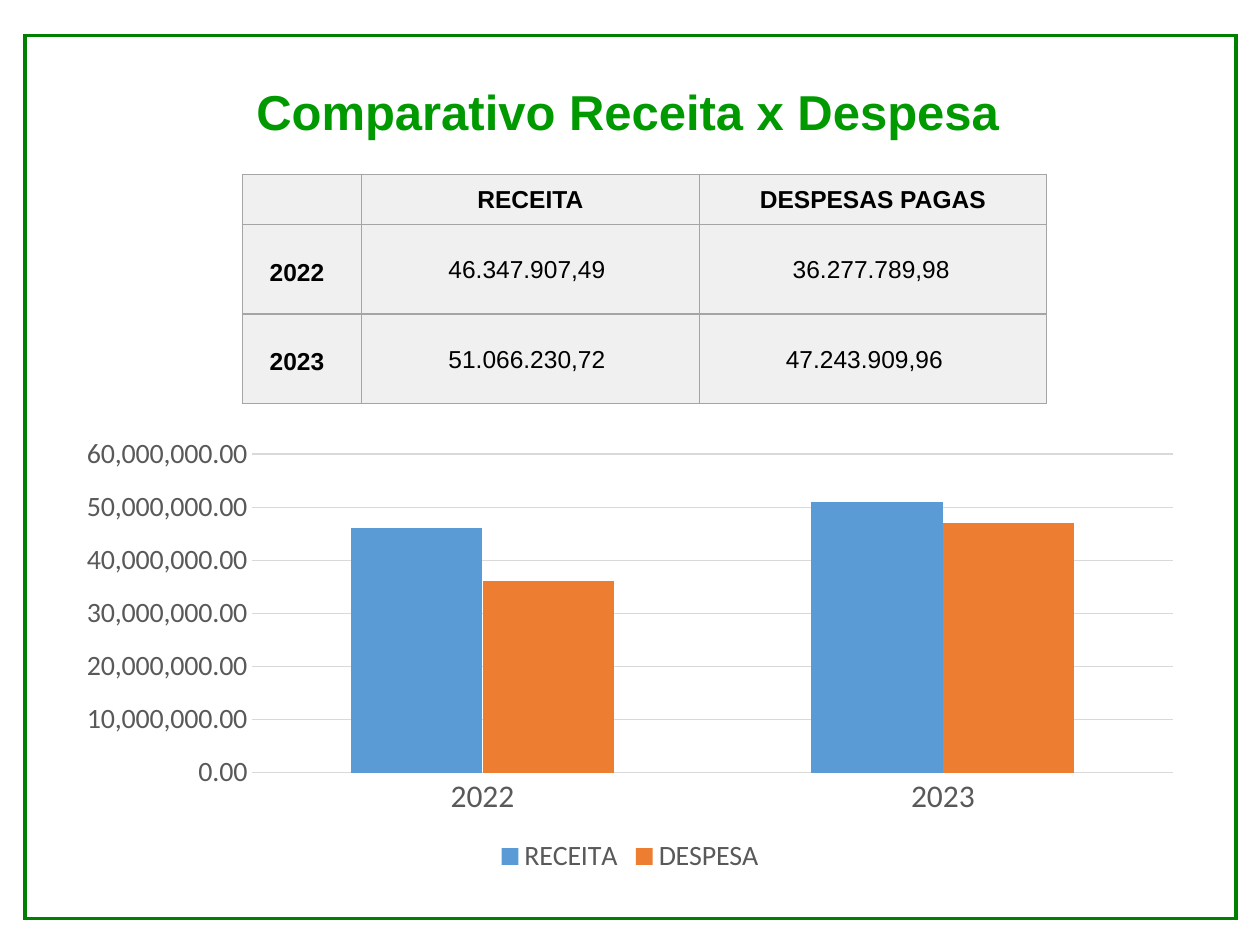
"""Build a slide comparing yearly revenue and expenses in a table and a chart."""
from lxml import etree
from pptx import Presentation
from pptx import util as u
from pptx.chart.data import CategoryChartData
from pptx.dml.color import RGBColor
from pptx.enum import chart as ch
from pptx.enum import shapes, text
from pptx.oxml import ns

FRAME_GREEN = RGBColor(0x00, 0x80, 0x00)
TITLE_GREEN = RGBColor(0x00, 0x99, 0x00)
BLACK = RGBColor(0x00, 0x00, 0x00)
CELL_GRAY = RGBColor(0xF0, 0xF0, 0xF0)
BORDER_GRAY = RGBColor(0xA5, 0xA5, 0xA5)
LABEL_GRAY = RGBColor(0x59, 0x59, 0x59)
GRID_GRAY = RGBColor(0xD9, 0xD9, 0xD9)
BLUE = RGBColor(0x5B, 0x9B, 0xD5)
ORANGE = RGBColor(0xED, 0x7D, 0x31)

YEARS = ("2022", "2023")
SERIES = (
    ("RECEITA", (46000000, 51000000), BLUE),
    ("DESPESA", (36000000, 47000000), ORANGE),
)
TABLE_ROWS = (
    ("", "RECEITA", "DESPESAS PAGAS"),
    ("2022", "46.347.907,49 ", " 36.277.789,98"),
    ("2023", "51.066.230,72 ", "47.243.909,96 "),
)
COLUMN_WIDTHS = (68, 193, 198.5)
ROW_HEIGHTS = (28.5, 51.2, 51.2)


def style_font(font, name, size, color, bold=False):
    font.name = name
    font.size = u.Pt(size)
    font.bold = bold
    font.color.rgb = color


def write_centered(frame, words, size, color, bold):
    paragraph = frame.paragraphs[0]
    paragraph.alignment = text.PP_ALIGN.CENTER
    run = paragraph.add_run()
    run.text = words
    style_font(run.font, "Arial", size, color, bold)


def add_frame(slide):
    frame = slide.shapes.add_shape(
        shapes.MSO_SHAPE.RECTANGLE, u.Pt(14.4), u.Pt(20.2), u.Pt(692), u.Pt(504.7))
    frame.shadow.inherit = False
    frame.fill.background()
    frame.line.color.rgb = FRAME_GREEN
    frame.line.width = u.Pt(2)
    outline = frame._element.spPr.find(ns.qn("a:ln"))
    etree.SubElement(outline, ns.qn("a:miter"), lim="800000")


def add_title(slide, words):
    title = slide.shapes.add_textbox(u.Pt(76.3), u.Pt(43.2), u.Pt(572.4), u.Pt(41))
    title.text_frame.word_wrap = True
    write_centered(title.text_frame, words, 28, TITLE_GREEN, True)


def set_borders(cell):
    properties = cell._tc.get_or_add_tcPr()
    for position, side in enumerate(("a:lnL", "a:lnR", "a:lnT", "a:lnB")):
        border = etree.Element(ns.qn(side), w=str(u.Pt(1)))
        fill = etree.SubElement(border, ns.qn("a:solidFill"))
        etree.SubElement(fill, ns.qn("a:srgbClr"), val=str(BORDER_GRAY))
        properties.insert(position, border)


def fill_cell(cell, words, row, column):
    cell.fill.solid()
    cell.fill.fore_color.rgb = CELL_GRAY
    set_borders(cell)
    cell.vertical_anchor = text.MSO_ANCHOR.MIDDLE
    is_year = row > 0 and column == 0
    cell.margin_left = u.Pt(0.7)
    cell.margin_right = u.Pt(6.5 if row > 0 and column != 1 else 0.7)
    cell.margin_top = u.Pt(4 if is_year else 0.7)
    cell.margin_bottom = 0
    if words:
        write_centered(cell.text_frame, words, 14, BLACK, row == 0 or is_year)


def add_totals_table(slide):
    totals = slide.shapes.add_table(
        len(ROW_HEIGHTS), len(COLUMN_WIDTHS), u.Pt(138.6), u.Pt(99.8),
        u.Pt(sum(COLUMN_WIDTHS)), u.Pt(sum(ROW_HEIGHTS))).table
    for column, width in zip(totals.columns, COLUMN_WIDTHS):
        column.width = u.Pt(width)
    for row, height in zip(totals.rows, ROW_HEIGHTS):
        row.height = u.Pt(height)
    for row, row_words in enumerate(TABLE_ROWS):
        for column, words in enumerate(row_words):
            fill_cell(totals.cell(row, column), words, row, column)


def style_axis(axis, size):
    axis.major_tick_mark = axis.minor_tick_mark = ch.XL_TICK_MARK.NONE
    axis.format.line.fill.background()
    style_font(axis.tick_labels.font, "Calibri", size, LABEL_GRAY)


def add_comparison_chart(slide):
    data = CategoryChartData(number_format="#,##0.00")
    data.categories = YEARS
    for name, values, _ in SERIES:
        data.add_series(name, values)
    comparison = slide.shapes.add_chart(
        ch.XL_CHART_TYPE.COLUMN_CLUSTERED, u.Pt(36.7), u.Pt(244.6),
        u.Pt(646.6), u.Pt(257.8), data).chart
    style_font(comparison.font, "Calibri", 10, BLACK)
    comparison.has_title = False

    plot = comparison.plots[0]
    plot.gap_width = 150
    plot.overlap = 0
    plot.vary_by_categories = False
    for series, (_, _, color) in zip(plot.series, SERIES):
        series.format.fill.solid()
        series.format.fill.fore_color.rgb = color

    style_axis(comparison.category_axis, 18)
    amounts = comparison.value_axis
    style_axis(amounts, 16)
    amounts.minimum_scale, amounts.maximum_scale = 0, 60000000
    amounts.major_unit = 10000000
    amounts.tick_labels.number_format = "#,##0.00"
    amounts.tick_labels.number_format_is_linked = False
    amounts.major_gridlines.format.line.color.rgb = GRID_GRAY
    amounts.major_gridlines.format.line.width = u.Pt(0.75)

    comparison.has_legend = True
    comparison.legend.position = ch.XL_LEGEND_POSITION.BOTTOM
    comparison.legend.include_in_layout = False
    style_font(comparison.legend.font, "Calibri", 16, LABEL_GRAY)


def main():
    deck = Presentation()
    deck.slide_width, deck.slide_height = u.Pt(720), u.Pt(540)
    slide = deck.slides.add_slide(deck.slide_layouts[6])
    add_frame(slide)
    add_title(slide, "Comparativo Receita x Despesa ")
    add_totals_table(slide)
    add_comparison_chart(slide)
    deck.save("out.pptx")


if __name__ == "__main__":
    main()
